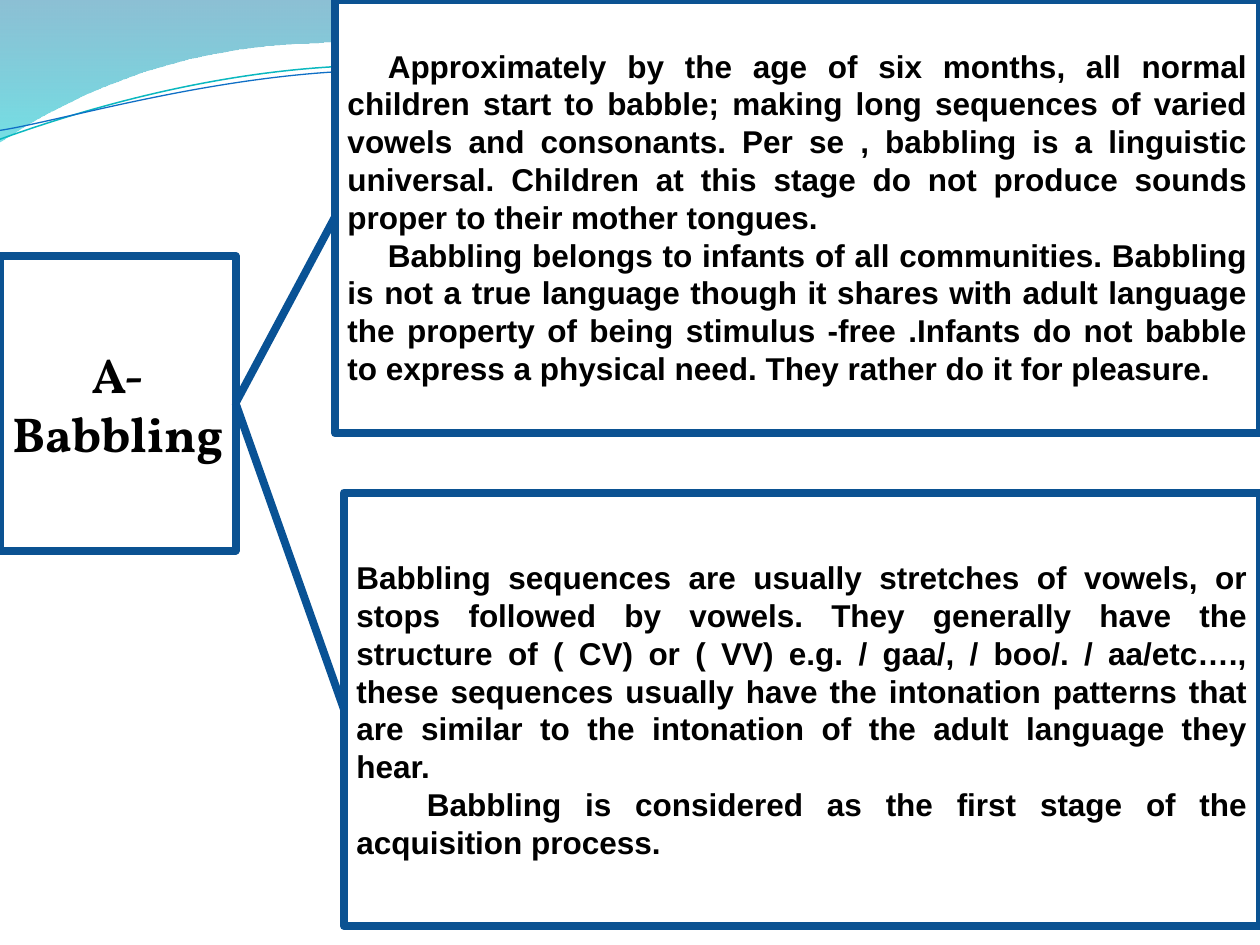
from lxml.etree import Element, SubElement
from pptx import Presentation
from pptx.dml.color import RGBColor
from pptx.enum.shapes import MSO_CONNECTOR, MSO_SHAPE
from pptx.enum.text import MSO_ANCHOR, MSO_AUTO_SIZE, PP_ALIGN
from pptx.oxml.ns import qn
from pptx.util import Inches, Pt

COLORS = {
    "paper": "FFFFFF", "ink": "000000", "border": "0B5292", "link": "095295",
    "deep_blue": "0074A1", "aqua": "00C6CF", "sea_green": "00A1A9", "mid_blue": "008BBF",
    "teal_line": "0AB8BF", "blue_line": "0F6FC6",
}
RGB = {name: RGBColor.from_string(value) for name, value in COLORS.items()}


def draw_curve(slide, start, moves, close):
    """Draw a freeform; a move of 2 numbers is a line, of 6 a Bezier curve."""
    points = [(Inches(move[i]), Inches(move[i + 1]))
              for move in moves for i in range(0, len(move), 2)]
    builder = slide.shapes.build_freeform(Inches(start[0]), Inches(start[1]))
    builder.add_line_segments(points, close=close)
    outline = builder.convert_to_shape()
    outline.shadow.inherit = False
    # Join each three control points into one curve
    track = next(outline._element.iter(qn("a:path")))
    lines = iter(track.findall(qn("a:lnTo")))
    for move in moves:
        pieces = [next(lines) for _ in range(len(move) // 2)]
        if len(pieces) == 3:
            curve = Element(qn("a:cubicBezTo"))
            pieces[0].addprevious(curve)
            for piece in pieces:
                curve.append(piece[0])
                track.remove(piece)
    return outline


def fill_box(box, place, paragraphs, font, size, align, inset):
    """Place a bordered box and set its paragraphs, given as (text, indent)."""
    for side, value in zip(("left", "top", "width", "height"), place):
        setattr(box, side, Inches(value))
    box.fill.solid()
    box.fill.fore_color.rgb = RGB["paper"]
    box.line.color.rgb = RGB["border"]
    box.line.width = Pt(4.5)
    frame = box.text_frame
    frame_format = {
        "word_wrap": True, "auto_size": MSO_AUTO_SIZE.NONE,
        "vertical_anchor": MSO_ANCHOR.MIDDLE,
        "margin_left": Inches(inset), "margin_right": Inches(inset),
    }
    for name, value in frame_format.items():
        setattr(frame, name, value)
    for index, (text, indent) in enumerate(paragraphs):
        paragraph = frame.paragraphs[0] if index == 0 else frame.add_paragraph()
        paragraph_format = {
            "alignment": align, "line_spacing": Pt(size * 1.2),
            "space_before": Pt(0), "space_after": Pt(0),
        }
        for name, value in paragraph_format.items():
            setattr(paragraph, name, value)
        paragraph._p.get_or_add_pPr().set("indent", str(Inches(indent)))
        run = paragraph.add_run()
        run.text = text
        for name, value in {"name": font, "size": Pt(size), "bold": True}.items():
            setattr(run.font, name, value)
        run.font.color.rgb = RGB["ink"]


prs = Presentation()
prs.slide_width, prs.slide_height = Inches(10), Inches(7.5)
slide = prs.slides.add_slide(prs.slide_layouts[5])

# Translucent waves across the top: start, moves, gradient (colour, position, alpha %)
waves = [
    ((0, 0),
     [(4.4, -0.01),
      (4.76, 0.17, 6.64, 0.63, 7.58, 0.63), (8.53, 0.63, 9.58, 0.26, 10, 0.09),
      (10.01, 0.36), (9.83, 0.44, 8.7, 0.76, 7.46, 0.75),
      (6.22, 0.75, 3.82, 0.28, 2.57, 0.34), (1.29, 0.36, 0.46, 0.83, -0.01, 1.13),
      (0, 0)],
     [("deep_blue", 0, 45), ("aqua", 1, 55)]),
    ((4.79, -0.01),
     [(5.09, 0.11, 6.82, 0.62, 7.69, 0.65), (8.56, 0.69, 9.61, 0.32, 10, 0.21),
      (10, 0), (4.79, -0.01)],
     [("sea_green", 0, 30), ("mid_blue", 0.8, 45)]),
]
for start, moves, gradient in waves:
    wave = draw_curve(slide, start, moves, True)
    wave.line.fill.background()
    wave.fill.gradient()
    wave.fill.gradient_angle = 270
    for stop, (color, position, alpha) in zip(wave.fill.gradient_stops, gradient):
        stop.color.rgb = RGB[color]
        stop.position = position
    tints = wave._element.spPr.iter(qn("a:srgbClr"))
    for tint, (color, position, alpha) in zip(tints, gradient):
        SubElement(tint, qn("a:alpha")).set("val", str(alpha * 1000))

# Thin lines following the waves, slightly turned
wave_lines = [
    ("teal_line", 0.85, (-0.02, 0.87),
     [(0.47, 0.72, 1.58, 0.41, 2.78, 0.42), (3.96, 0.42, 5.91, 0.93, 7.12, 0.9),
      (8.32, 0.87, 9.4, 0.36, 10, 0.22)]),
    ("blue_line", 0.75, (-0.02, 0.8),
     [(0.46, 0.75, 1.64, 0.45, 2.83, 0.46), (4.03, 0.46, 5.96, 0.88, 7.16, 0.85),
      (8.35, 0.83, 9.42, 0.42, 10.01, 0.3)]),
]
for color, width, start, moves in wave_lines:
    wave_line = draw_curve(slide, start, moves, False)
    wave_line.rotation = 357.3
    wave_line.fill.background()
    wave_line.line.color.rgb = RGB[color]
    wave_line.line.width = Pt(width)

# Topic box
topic = slide.shapes.title
fill_box(topic, (0, 2.03, 1.87, 2.34), [("A-", 0), ("Babbling", 0)],
         "Vollkorn", 28, PP_ALIGN.CENTER, 0.05)

# Explanation panels, reaching to the right slide edge
explanations = [
    (2.66, 0, [
        ("Approximately by the age of six months, all normal children start to babble; "
         "making long sequences of varied vowels and consonants. Per se , babbling is a "
         "linguistic universal. Children at this stage do not produce sounds proper to "
         "their mother tongues. ", 0.32),
        ("Babbling belongs to infants of all communities. Babbling is not a true language "
         "though it shares with adult language the property of being stimulus -free "
         ".Infants do not babble to express a physical need. They rather do it for "
         "pleasure.", 0.32)]),
    (2.73, 3.91, [
        ("Babbling sequences are usually stretches of vowels, or stops followed by vowels. "
         "They generally have the structure of ( CV) or ( VV) e.g. / gaa/, / boo/. / "
         "aa/etc…., these sequences usually have the intonation patterns that are similar "
         "to the intonation of the adult language they hear.", 0),
        ("Babbling is considered as the first stage of the acquisition process.", 0.56)]),
]
panels = []
for left, top, paragraphs in explanations:
    panel = slide.shapes.add_shape(MSO_SHAPE.RECTANGLE, 0, 0, 0, 0)
    panel.shadow.inherit = False
    fill_box(panel, (left, top, 10 - left, 3.44), paragraphs,
             "Arial", 18, PP_ALIGN.JUSTIFY, 0.1)
    panels.append(panel)

# Links from the topic's right side to each panel's left side
for panel in panels:
    link = slide.shapes.add_connector(MSO_CONNECTOR.STRAIGHT, 0, 0, 0, 0)
    link.begin_connect(topic, 3)
    link.end_connect(panel, 1)
    link.line.color.rgb = RGB["link"]
    link.line.width = Pt(4.5)
    SubElement(link._element.spPr, qn("a:effectLst"))

prs.save("out.pptx")
